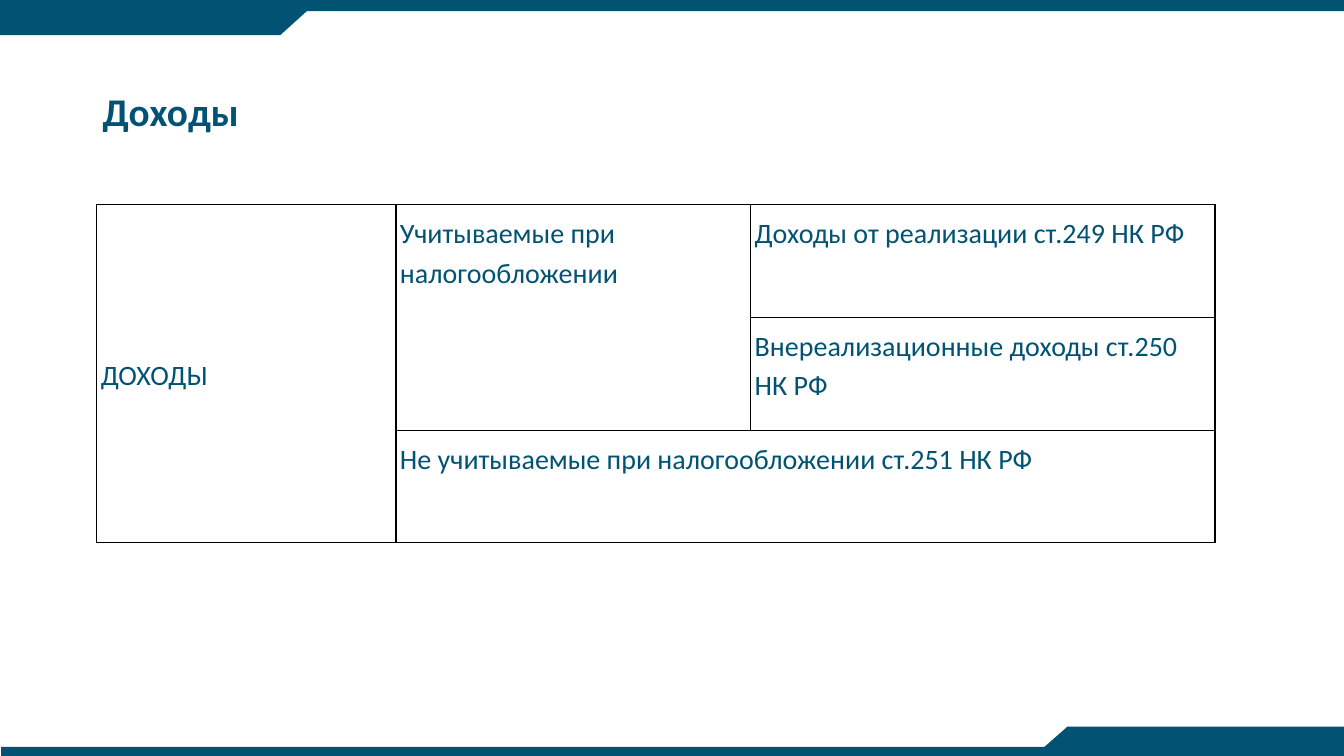
from lxml import etree
from pptx import Presentation
from pptx.dml.color import RGBColor
from pptx.enum.shapes import MSO_SHAPE as Shape
from pptx.enum.text import MSO_ANCHOR as Anchor, PP_ALIGN as Align
from pptx.oxml.ns import qn
from pptx.util import Cm, Pt

TEAL = "025373"
WIDE, HIGH = 33.87, 19.05


def color(code):
    return RGBColor.from_string(code)


def style(para, size, gap, bold=False):
    para.alignment = Align.LEFT
    para.line_spacing = gap
    for run in para.runs:
        font = run.font
        font.name, font.size, font.bold = "Calibri", Pt(size), bold
        font.color.rgb = color(TEAL)


def block(slide, kind, left, top, width, height):
    part = slide.shapes.add_shape(kind, Cm(left), Cm(top), Cm(width), Cm(height))
    part.shadow.inherit = False
    part.fill.solid()
    part.fill.fore_color.rgb = color(TEAL)
    part.line.fill.background()
    return part


def band(slide, strip, tab, slant, turn):
    """Draw an edge strip with a tab that ends in a slanted side."""
    block(slide, Shape.RECTANGLE, *strip)
    block(slide, Shape.RECTANGLE, *tab)
    block(slide, Shape.FLOWCHART_MERGE, *slant).rotation = turn


def heading(slide, text, left, top, width, height):
    title = slide.shapes.title
    title.left, title.top = Cm(left), Cm(top)
    title.width, title.height = Cm(width), Cm(height)
    frame = title.text_frame
    frame.text = text
    frame.vertical_anchor = Anchor.MIDDLE
    style(frame.paragraphs[0], 28, 0.9, True)


def border(cell):
    props = cell._tc.get_or_add_tcPr()
    for side in ("lnL", "lnR", "lnT", "lnB"):
        line = etree.SubElement(props, qn("a:" + side), w=str(Pt(1)))
        fill = etree.SubElement(line, qn("a:solidFill"))
        etree.SubElement(fill, qn("a:srgbClr"), val="000000")


def grid(slide, left, top, cols, row, count):
    frame = slide.shapes.add_table(count, len(cols), Cm(left), Cm(top),
                                   Cm(sum(cols)), Cm(row * count))
    table = frame.table
    table.first_row = table.horz_banding = False
    for col, width in zip(table.columns, cols):
        col.width = Cm(width)
    for line in table.rows:
        line.height = Cm(row)
    for cell in table.iter_cells():
        border(cell)
        cell.fill.background()
        cell.margin_left = cell.margin_right = Cm(0.1)
        cell.margin_top = cell.margin_bottom = Cm(0.18)
    return table


def income(slide, left, top):
    table = grid(slide, left, top, (7.54, 8.94, 11.7), 2.84, 3)
    for start, end in (((0, 0), (2, 0)), ((0, 1), (1, 1)), ((2, 1), (2, 2))):
        table.cell(*start).merge(table.cell(*end))
    texts = {
        (0, 0): "ДОХОДЫ",
        (0, 1): "Учитываемые при налогообложении",
        (0, 2): "Доходы от реализации ст.249 НК РФ",
        (1, 2): "Внереализационные доходы ст.250 НК РФ",
        (2, 1): "Не учитываемые при налогообложении ст.251 НК РФ",
    }
    for place, text in texts.items():
        cell = table.cell(*place)
        cell.text_frame.text = text
        style(cell.text_frame.paragraphs[0], 20, 1.15)
    table.cell(0, 0).vertical_anchor = Anchor.MIDDLE


def main():
    deck = Presentation()
    deck.slide_width, deck.slide_height = Cm(WIDE), Cm(HIGH)
    slide = deck.slides.add_slide(deck.slide_layouts[5])
    band(slide, (0, 0, WIDE, 0.28), (0, 0.13, 7.06, 0.76),
         (6.22, 0.13, 1.68, 0.76), 0)
    band(slide, (0.03, 18.82, WIDE - 0.03, 0.23), (26.9, 18.31, WIDE - 26.9, 0.74),
         (26.06, 18.31, 1.68, 0.74), 180)
    heading(slide, "Доходы", 2.33, 1.02, 29.21, 3.68)
    income(slide, 2.44, 5.16)
    deck.save("out.pptx")


if __name__ == "__main__":
    main()
